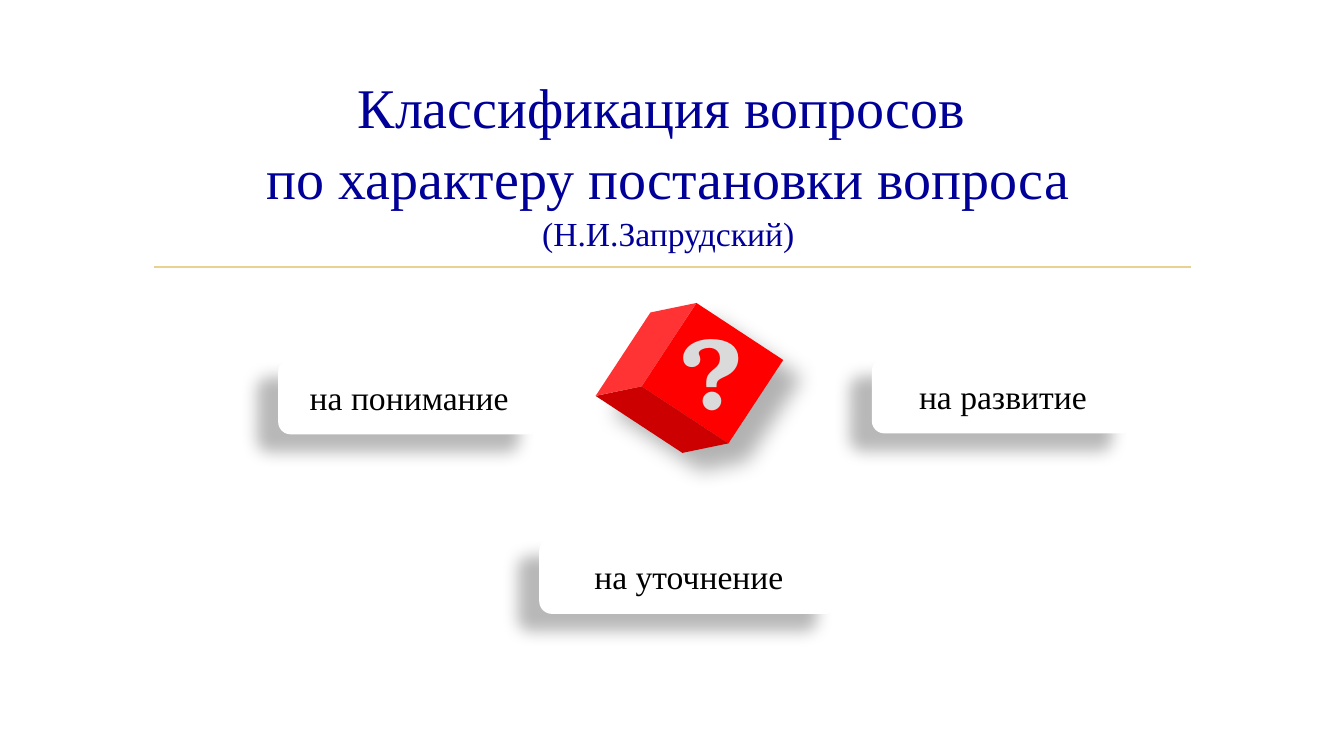
from dataclasses import dataclass

import lxml.etree
import pptx
import pptx.dml.color
import pptx.enum.shapes
import pptx.enum.text
import pptx.oxml.ns
import pptx.util

Pt = pptx.util.Pt
SHAPES = pptx.enum.shapes.MSO_SHAPE
MIDDLE = pptx.enum.text.MSO_ANCHOR.MIDDLE
qn = pptx.oxml.ns.qn


@dataclass(frozen=True)
class Theme:
    body_font: str = "Times New Roman"
    mark_font: str = "TeX Gyre Bonum"
    title_color: str = "000099"
    text_color: str = "000000"
    rule_color: str = "E8D191"
    cube_color: str = "FF0000"
    mark_color: str = "DADADA"
    card_color: str = "FFFFFF"
    shadow_color: str = "000000"
    title_size: int = 40
    text_size: int = 24
    mark_size: int = 72
    # Shadows: opacity in percent, blur and distance in points, angle in degrees
    cube_shadow: tuple = (30, 15, 18, 45)
    card_shadow: tuple = (28, 11.8, 19.7, 141)


class SlideBuilder:
    def __init__(self, page, theme):
        self.page = page
        self.theme = theme

    def rule(self, left, right, top):
        line = self.page.shapes.add_connector(
            pptx.enum.shapes.MSO_CONNECTOR.STRAIGHT, Pt(left), Pt(top), Pt(right), Pt(top))
        line.line.color.rgb = pptx.dml.color.RGBColor.from_string(self.theme.rule_color)
        line.line.width = Pt(1.25)
        lxml.etree.SubElement(line._element.spPr, qn("a:effectLst"))

    def fill_frame(self, frame, lines, color, font, bold=False, line_spacing=None):
        """Fill a frame with centred (text, size) lines."""
        frame.word_wrap = True
        frame.text = "\n".join(text for text, size in lines)
        for para, (text, size) in zip(frame.paragraphs, lines):
            para.alignment = pptx.enum.text.PP_ALIGN.CENTER
            para.line_spacing = line_spacing
            for span in para.runs:
                span.font.name = font
                span.font.size = Pt(size)
                span.font.bold = bold
                span.font.color.rgb = pptx.dml.color.RGBColor.from_string(color)

    def text(self, bounds, lines, color, font, **style):
        box = self.page.shapes.add_textbox(*map(Pt, bounds))
        self.fill_frame(box.text_frame, lines, color, font, **style)
        return box

    def shape(self, kind, bounds, color, shadow, flipped=False):
        shape = self.page.shapes.add_shape(kind, *map(Pt, bounds))
        shape.fill.solid()
        shape.fill.fore_color.rgb = pptx.dml.color.RGBColor.from_string(color)
        shape.line.fill.background()
        if flipped:
            shape._element.spPr.get_or_add_xfrm().set("flipH", "1")
        self.cast_shadow(shape, *shadow)
        return shape

    def cast_shadow(self, shape, opacity, blur, distance, angle):
        shape.shadow.inherit = False
        effects = shape._element.spPr.find(qn("a:effectLst"))
        outer = lxml.etree.SubElement(
            effects, qn("a:outerShdw"), blurRad=str(Pt(blur)), dist=str(Pt(distance)),
            dir=str(angle * 60000), algn="ctr", rotWithShape="0")
        tint = lxml.etree.SubElement(outer, qn("a:srgbClr"), val=self.theme.shadow_color)
        lxml.etree.SubElement(tint, qn("a:alpha"), val=str(opacity * 1000))

    def card(self, bounds, label, flipped=False):
        theme = self.theme
        card = self.shape(SHAPES.ROUNDED_RECTANGLE, bounds, theme.card_color,
                          theme.card_shadow, flipped)
        card.text_frame.vertical_anchor = MIDDLE
        self.fill_frame(card.text_frame, [(label, theme.text_size)],
                        theme.text_color, theme.body_font)


def main():
    deck = pptx.Presentation()
    deck.slide_width, deck.slide_height = Pt(960), Pt(540)
    theme = Theme()
    slide = SlideBuilder(deck.slides.add_slide(deck.slide_layouts[6]), theme)

    # Title and the rule under it
    slide.rule(110, 850.5, 190.8)
    title = slide.text(
        (36, 40.3, 882.7, 149.8),
        [("Классификация вопросов ", theme.title_size),
         ("по характеру постановки вопроса", theme.title_size),
         ("(Н.И.Запрудский)", theme.text_size)],
        theme.title_color, theme.body_font, line_spacing=1.05)
    title.text_frame.vertical_anchor = MIDDLE

    # Tilted cube with a question mark
    cube = slide.shape(SHAPES.CUBE, (445, 221, 95, 97.9), theme.cube_color,
                       theme.cube_shadow, flipped=True)
    cube.rotation = 303.3
    mark = slide.text((465.8, 216.7, 84.2, 94.3), [("?", theme.mark_size)],
                      theme.mark_color, theme.mark_font, bold=True)
    mark.text_frame.auto_size = pptx.enum.text.MSO_AUTO_SIZE.SHAPE_TO_FIT_TEXT
    mark.text_frame.paragraphs[0].runs[0].font._element.set("spc", "50")

    # Kinds of questions
    slide.card((198.7, 257, 187.2, 53.3), "на понимание")
    slide.card((385.2, 384.5, 213.8, 54), "на уточнение")
    slide.card((622.8, 256.3, 187.2, 53.3), "на развитие", flipped=True)

    deck.save("out.pptx")


if __name__ == "__main__":
    main()
